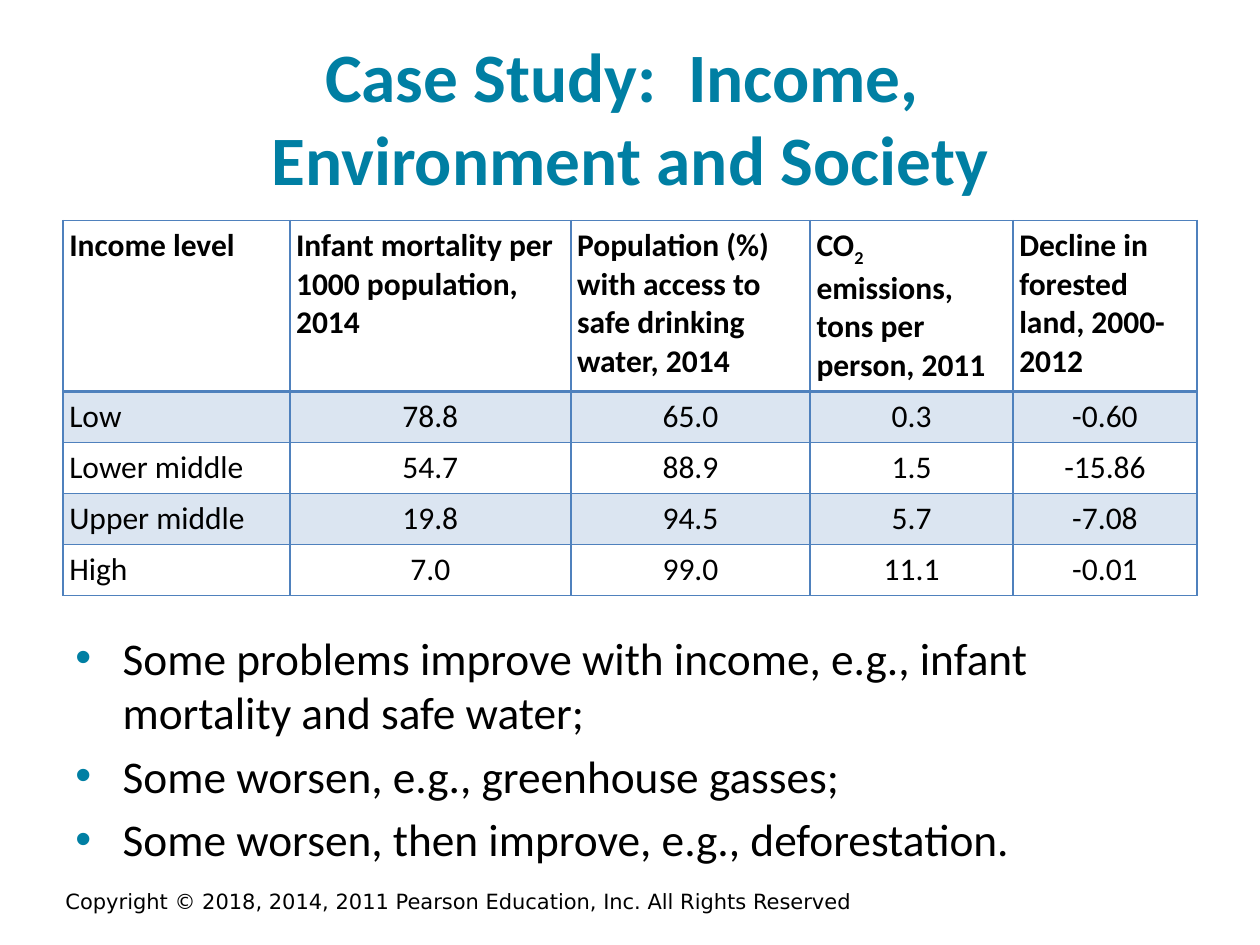
from lxml import etree
from pptx import Presentation
from pptx.dml.color import RGBColor
from pptx.enum import text
from pptx.oxml import ns
from pptx.util import Pt

COLORS = {"teal": "007FA3", "black": "000000", "blue": "4F81BD"}
ALIGN = text.PP_ALIGN
ANCHOR = text.MSO_ANCHOR

# Table content
HEADERS = [
    "Income level",
    "Infant mortality per 1000 population, 2014",
    "Population (%) with access to safe drinking water, 2014",
    ("CO", "2", " emissions, tons per person, 2011"),
    "Decline in forested land, 2000-2012",
]
ROWS = [
    ["Low", "78.8", "65.0", "0.3", "-0.60"],
    ["Lower middle", "54.7", "88.9", "1.5", "-15.86"],
    ["Upper middle", "19.8", "94.5", "5.7", "-7.08"],
    ["High", "7.0", "99.0", "11.1", "-0.01"],
]
COLUMN_WIDTHS = [129.6, 160.6, 136.8, 115.9, 105.1]
HEADER_HEIGHT, ROW_HEIGHT = 97.6, 29.2

BULLETS = [
    "Some problems improve with income, e.g., infant mortality and safe water;",
    "Some worsen, e.g., greenhouse gasses;",
    "Some worsen, then improve, e.g., deforestation.",
]


def add_element(parent, tag, **attributes):
    return etree.SubElement(parent, ns.qn(tag), **attributes)


def write(para, content, size=18, font="Calibri", color="black", bold=False, align=ALIGN.LEFT):
    """Fill a paragraph; in a tuple of parts, every second part is a subscript."""
    para.alignment = align
    parts = (content,) if isinstance(content, str) else content
    for index, part in enumerate(parts):
        for number, line in enumerate(part.split("\n")):
            if number:
                para.add_line_break()
            span = para.add_run()
            span.text = line
            span.font.name = font
            span.font.size = Pt(size)
            span.font.bold = bold
            span.font.color.rgb = RGBColor.from_string(COLORS[color])
            if index % 2:
                span.font._element.set("baseline", "-25000")


def add_box(page, left, top, width, height, anchor=ANCHOR.TOP):
    box = page.shapes.add_textbox(Pt(left), Pt(top), Pt(width), Pt(height))
    frame = box.text_frame
    frame.word_wrap = True
    frame.vertical_anchor = anchor
    return frame


def add_bullets(frame, items):
    for index, item in enumerate(items):
        para = frame.paragraphs[0] if index == 0 else frame.add_paragraph()
        if index:
            para.space_before = Pt(5.2)
        properties = para._p.get_or_add_pPr()
        properties.set("marL", str(Pt(27)))
        properties.set("indent", str(-Pt(27)))
        bullet_color = add_element(properties, "a:buClr")
        add_element(bullet_color, "a:srgbClr", val=COLORS["teal"])
        add_element(properties, "a:buFont", typeface="Arial")
        add_element(properties, "a:buChar", char="•")
        write(para, item, size=25.9)


def set_borders(cell, **widths):
    properties = cell._tc.get_or_add_tcPr()
    for side in "LRTB":
        line = add_element(properties, f"a:ln{side}", w=str(Pt(widths.get(side, 1))))
        fill = add_element(line, "a:solidFill")
        add_element(fill, "a:srgbClr", val=COLORS["blue"])


def shade(cell, banded):
    if not banded:
        cell.fill.background()
        return
    cell.fill.solid()
    cell.fill.fore_color.rgb = RGBColor.from_string(COLORS["blue"])
    tint = cell._tc.tcPr.find(".//" + ns.qn("a:solidFill") + "[last()]/" + ns.qn("a:srgbClr"))
    for tint in cell._tc.tcPr.findall(ns.qn("a:solidFill") + "/" + ns.qn("a:srgbClr")):
        add_element(tint, "a:alpha", val="20000")


def add_income_table(page, left, top):
    data = [HEADERS] + ROWS
    heights = [HEADER_HEIGHT] + [ROW_HEIGHT] * len(ROWS)
    table = page.shapes.add_table(
        len(data), len(HEADERS), Pt(left), Pt(top), Pt(sum(COLUMN_WIDTHS)), Pt(sum(heights))
    ).table
    table.first_row = table.horz_banding = False
    for column, width in zip(table.columns, COLUMN_WIDTHS):
        column.width = Pt(width)
    for r, (values, height) in enumerate(zip(data, heights)):
        table.rows[r].height = Pt(height)
        for c, value in enumerate(values):
            cell = table.cell(r, c)
            cell.margin_left = cell.margin_right = Pt(3.6)
            cell.margin_top = cell.margin_bottom = Pt(3.6)
            # The rule under the header is heavier
            set_borders(cell, T=2 if r == 1 else 1, B=2 if r == 0 else 1)
            shade(cell, banded=r % 2 == 1)
            align = ALIGN.CENTER if r and c else ALIGN.LEFT
            write(cell.text_frame.paragraphs[0], value, bold=r == 0, align=align)


def main():
    deck = Presentation()
    deck.slide_width, deck.slide_height = Pt(720), Pt(540)
    page = deck.slides.add_slide(deck.slide_layouts[6])

    # Copyright line
    footer = add_box(page, -10.8, 501.8, 545.8, 25.9, ANCHOR.MIDDLE)
    write(footer.paragraphs[0], "Copyright © 2018, 2014, 2011 Pearson Education, Inc. All Rights Reserved",
          size=12, font="DejaVu Sans", align=ALIGN.CENTER)

    # Title
    title = add_box(page, 36, 21.6, 648, 90, ANCHOR.MIDDLE)
    write(title.paragraphs[0], "Case Study:  Income, \nEnvironment and Society",
          size=39.6, color="teal", bold=True, align=ALIGN.CENTER)

    # Table
    add_income_table(page, 36, 126)

    # Conclusions
    add_bullets(add_box(page, 36, 356.4, 648, 126), BULLETS)

    deck.save("out.pptx")


if __name__ == "__main__":
    main()
